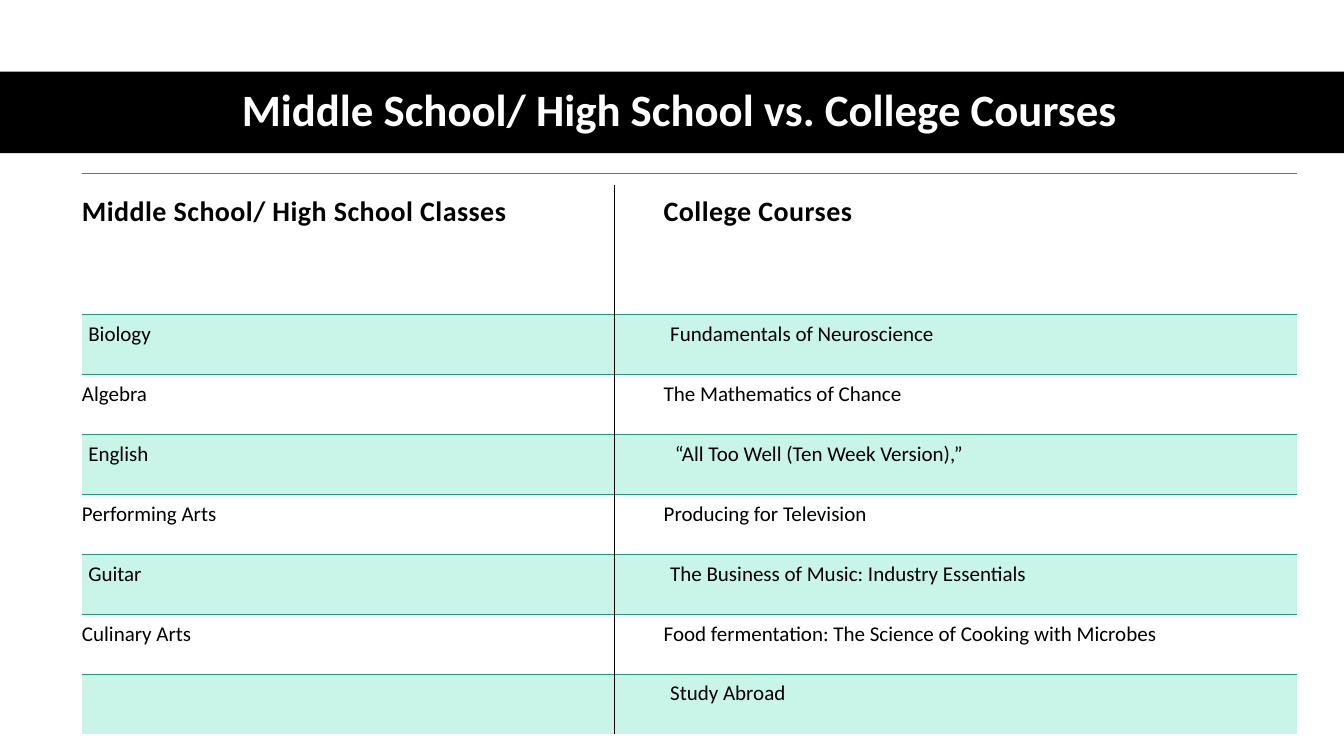
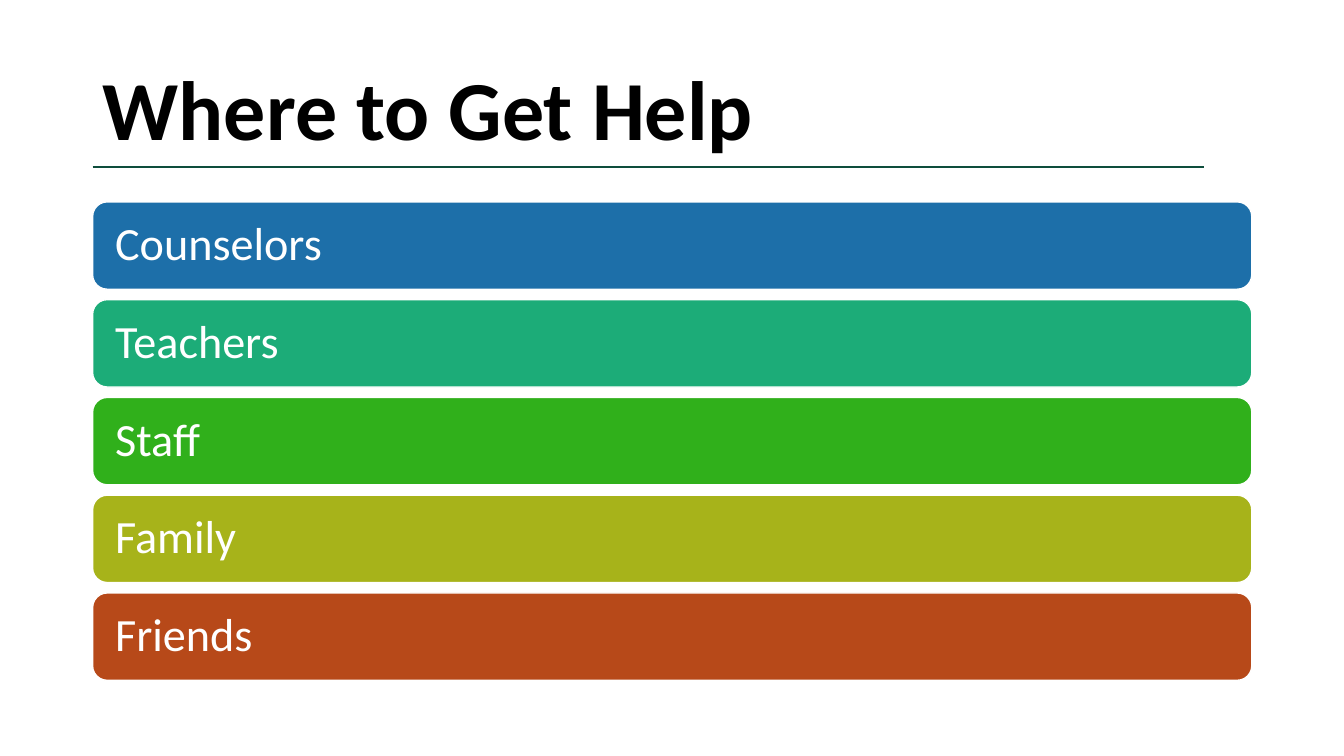
from dataclasses import dataclass

from lxml import etree
from pptx import Presentation
from pptx.dml.color import RGBColor
from pptx.enum.shapes import MSO_CONNECTOR, MSO_SHAPE
from pptx.enum.text import MSO_ANCHOR, MSO_AUTO_SIZE, PP_ALIGN
from pptx.oxml.ns import qn
from pptx.util import Pt

RECT, ROUND = MSO_SHAPE.RECTANGLE, MSO_SHAPE.ROUNDED_RECTANGLE
LINE = MSO_CONNECTOR.STRAIGHT
MIDDLE, TOP = MSO_ANCHOR.MIDDLE, MSO_ANCHOR.TOP
LEFT, CENTER = PP_ALIGN.LEFT, PP_ALIGN.CENTER
FIXED = MSO_AUTO_SIZE.NONE

# Shared look
FONT = "Calibri"
BLACK = RGBColor(0x00, 0x00, 0x00)
WHITE = RGBColor(0xFF, 0xFF, 0xFF)
GREEN = RGBColor(0x1D, 0x9A, 0x78)
MINT = RGBColor(0xC8, 0xF5, 0xE8)
PINE = RGBColor(0x0E, 0x4D, 0x3C)
BLUE = RGBColor(0x1D, 0x6F, 0xA9)
TEAL = RGBColor(0x1C, 0xAC, 0x78)
LEAF = RGBColor(0x30, 0xB0, 0x1B)
OLIVE = RGBColor(0xA7, 0xB3, 0x1A)
RUST = RGBColor(0xB7, 0x49, 0x19)
WIDE, HIGH = 960, 540
TITLE_ONLY = 5
PLAIN_GRID = "{2D5ABB26-0587-4C30-8999-92F81FD0307C}"


@dataclass(frozen=True)
class Box:
    left: float
    top: float
    width: float
    height: float

    def place(self) -> tuple:
        return Pt(self.left), Pt(self.top), Pt(self.width), Pt(self.height)


@dataclass(frozen=True)
class Style:
    size: float
    color: RGBColor
    bold: bool = False
    track: int = 0  # hundredths of a point


@dataclass(frozen=True)
class Help:
    name: str
    color: RGBColor


@dataclass(frozen=True)
class Pair:
    school: str
    college: str


HEAD = Style(20, BLACK, True, 30)
BODY = Style(15, BLACK)
LABEL = Style(33, WHITE)

HEADS = Pair("Middle School/ High School Classes", "College Courses")
PAIRS = [
    Pair("Biology", "Fundamentals of Neuroscience"),
    Pair("Algebra", "The Mathematics of Chance"),
    Pair("English", " “All Too Well (Ten Week Version),” "),
    Pair("Performing Arts", "Producing for Television"),
    Pair("Guitar", "The Business of Music: Industry Essentials"),
    Pair("Culinary Arts", "Food fermentation: The Science of Cooking with Microbes"),
    Pair("", "Study Abroad"),
]
HELPS = [
    Help("Counselors", BLUE),
    Help("Teachers", TEAL),
    Help("Staff", LEAF),
    Help("Family", OLIVE),
    Help("Friends", RUST),
]


def write(para, text: str, style: Style) -> None:
    run = para.add_run()
    run.text = text
    font = run.font
    font.name, font.size, font.bold = FONT, Pt(style.size), style.bold
    font.color.rgb = style.color
    if style.track:
        run._r.get_or_add_rPr().set("spc", str(style.track))


def add_title(slide, text: str, box: Box, style: Style, align) -> None:
    title = slide.shapes.title
    title.left, title.top, title.width, title.height = box.place()
    frame = title.text_frame
    frame.auto_size, frame.vertical_anchor = FIXED, MIDDLE
    para = frame.paragraphs[0]
    para.alignment, para.line_spacing = align, 0.9
    write(para, text, style)


def add_block(slide, kind, box: Box, color: RGBColor):
    block = slide.shapes.add_shape(kind, *box.place())
    block.shadow.inherit = False
    block.fill.solid()
    block.fill.fore_color.rgb = color
    block.line.fill.background()
    return block


def add_line(slide, start: tuple, end: tuple, color: RGBColor, width: float) -> None:
    line = slide.shapes.add_connector(LINE, *map(Pt, start + end))
    line.line.color.rgb, line.line.width = color, Pt(width)
    etree.SubElement(line._element.spPr, qn("a:effectLst"))


def rule_top(cell, width: float) -> None:
    """Draw the upper border of a table cell."""
    edge = etree.Element(qn("a:lnT"), w=str(Pt(width)))
    fill = etree.SubElement(edge, qn("a:solidFill"))
    etree.SubElement(fill, qn("a:srgbClr"), val=str(GREEN))
    cell._tc.get_or_add_tcPr().insert(0, edge)


def fill_cell(cell, text: str, style: Style, pads: tuple, anchor) -> None:
    cell.margin_left, cell.margin_top, cell.margin_right, cell.margin_bottom = map(Pt, pads)
    cell.vertical_anchor = anchor
    if text:
        write(cell.text_frame.paragraphs[0], text, style)


def add_courses(slide, box: Box) -> None:
    cols, rows = (415.6, 452.4), [55.4, 45.4] + [42.8] * len(PAIRS)
    table = slide.shapes.add_table(len(rows), len(cols), *box.place()).table
    table.first_row = table.horz_banding = False
    table._tbl.tblPr.find(qn("a:tableStyleId")).text = PLAIN_GRID
    for col, width in zip(table.columns, cols):
        col.width = Pt(width)
    for row, height in zip(table.rows, rows):
        row.height = Pt(height)

    # Heading row, followed by an empty one
    for col, text in enumerate((HEADS.school, HEADS.college)):
        cell = table.cell(0, col)
        fill_cell(cell, text, HEAD, (0, 10, 0.7, 10), MIDDLE)
        rule_top(cell, 1.5)

    # Course rows, every other one tinted
    for num, pair in enumerate(PAIRS):
        tint = num % 2 == 0
        for col, text in enumerate((pair.school, pair.college)):
            cell = table.cell(num + 2, col)
            fill_cell(cell, text, BODY, (4.6 if tint else 0, 5, 5, 10), TOP)
            if tint:
                cell.fill.solid()
                cell.fill.fore_color.rgb = MINT
                rule_top(cell, 0.75)


def add_help(slide, item: Help, box: Box) -> None:
    bar = add_block(slide, ROUND, box, item.color)
    bar.line.color.rgb, bar.line.width = WHITE, Pt(1)
    frame = bar.text_frame
    frame.word_wrap, frame.vertical_anchor = True, MIDDLE
    frame.margin_left = frame.margin_right = Pt(13)
    para = frame.paragraphs[0]
    para.alignment, para.line_spacing = LEFT, 0.9
    write(para, item.name, LABEL)


def build_courses(deck) -> None:
    slide = deck.slides.add_slide(deck.slide_layouts[TITLE_ONLY])
    band = add_block(slide, RECT, Box(0, 51.2, WIDE, 58.2), BLACK)
    slide.shapes._spTree.insert(2, band._element)  # behind the title
    add_title(slide, "Middle School/ High School vs. College Courses",
              Box(44, 50.6, 883, 58.2), Style(32, WHITE, True), CENTER)
    add_courses(slide, Box(58.5, 124, 868, 400.4))
    add_line(slide, (438.6, 132.2), (438.6, 524.4), BLACK, 0.5)


def build_help(deck) -> None:
    slide = deck.slides.add_slide(deck.slide_layouts[TITLE_ONLY])
    left, top, step = 66.2, 144.2, 69.84
    add_title(slide, "Where to Get Help", Box(left, 28.8, 828, 104.4),
              Style(60, BLACK, True), LEFT)
    for num, item in enumerate(HELPS):
        add_help(slide, item, Box(left, top + num * step, 828, 62.4))
    add_line(slide, (left, 119), (860, 119), PINE, 1.5)


def main() -> None:
    deck = Presentation()
    deck.slide_width, deck.slide_height = Pt(WIDE), Pt(HIGH)
    build_courses(deck)
    build_help(deck)
    deck.save("out.pptx")


if __name__ == "__main__":
    main()
